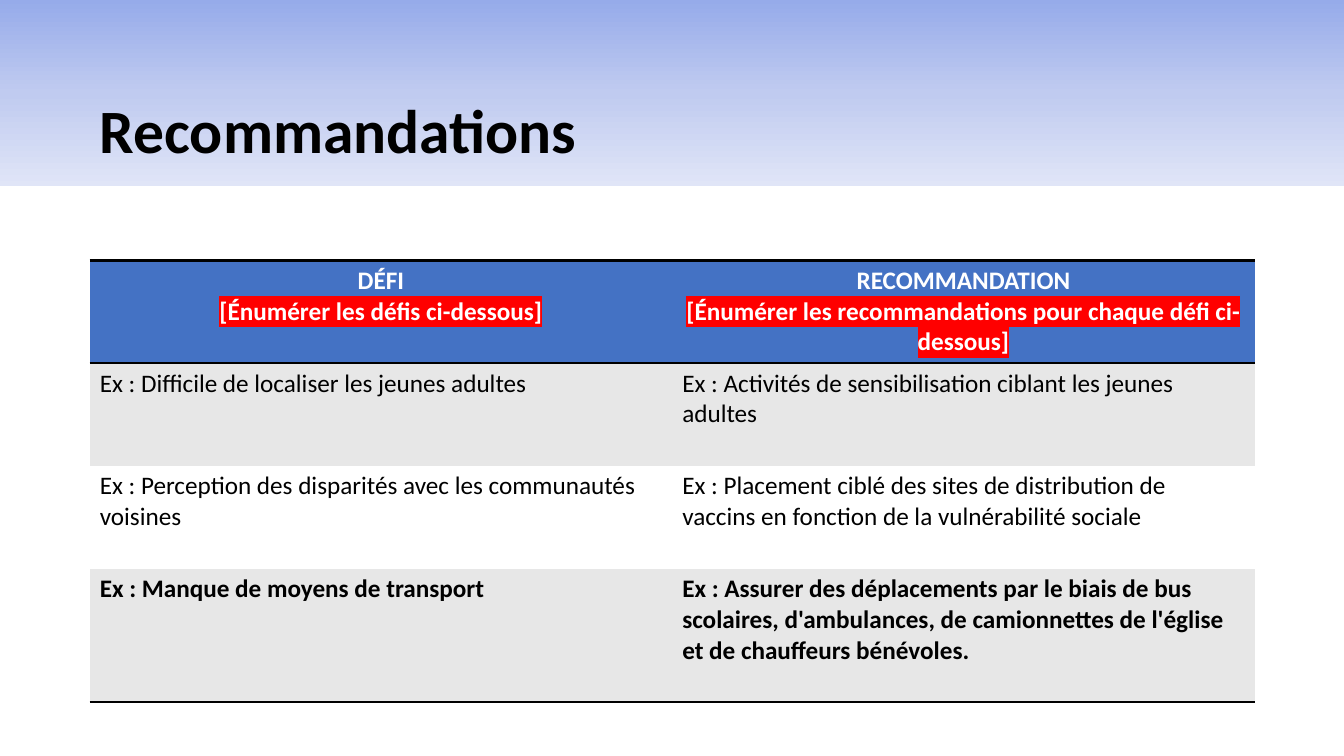
import copy
from dataclasses import dataclass

import lxml.etree
import pptx
import pptx.dml.color
import pptx.enum.dml
import pptx.enum.shapes
import pptx.enum.text
import pptx.oxml.ns
import pptx.util

Cm = pptx.util.Cm
qn = pptx.oxml.ns.qn
ALIGN = pptx.enum.text.PP_ALIGN
ANCHOR = pptx.enum.text.MSO_ANCHOR
NO_GRID_STYLE = "{2D5ABB26-0587-4C30-8999-92F81FD0307C}"


@dataclass(frozen=True)
class Theme:
    font: str = "Calibri"
    title_size: int = 44
    body_size: int = 18
    rule_width: int = 2
    ink: str = "000000"
    paper: str = "FFFFFF"
    header: str = "4472C4"
    stripe: str = "E7E7E7"
    highlight: str = "FF0000"
    band: tuple = ((0, "96ABEA"), (0.5, "C0CBF0"), (1, "E0E5F7"))


def rgb(color):
    return pptx.dml.color.RGBColor.from_string(color)


def write(paragraph, text, *, font, size, color, bold=False, align=ALIGN.LEFT,
          spacing=1.0, highlight=None):
    """Put formatted text in a paragraph."""
    paragraph.alignment = align
    paragraph.line_spacing = spacing
    run = paragraph.add_run()
    run.text = text
    run.font.size = pptx.util.Pt(size)
    run.font.bold = bold
    run.font.color.rgb = rgb(color)
    if highlight:
        mark = lxml.etree.SubElement(run.font._element, qn("a:highlight"))
        lxml.etree.SubElement(mark, qn("a:srgbClr"), val=highlight)
    run.font.name = font


class SlideBuilder:
    def __init__(self, slide, theme):
        self.slide = slide
        self.theme = theme

    def band(self, width, height):
        band = self.slide.shapes.add_shape(
            pptx.enum.shapes.MSO_SHAPE.RECTANGLE, 0, 0, width, height)
        band.shadow.inherit = False
        band.line.fill.background()
        band.fill.gradient()
        band.fill.gradient_angle = 270
        first_stop = band._element.spPr.find(".//" + qn("a:gs"))
        first_stop.addnext(copy.deepcopy(first_stop))
        for stop, (position, color) in zip(band.fill.gradient_stops, self.theme.band):
            stop.position = position
            stop.color.rgb = rgb(color)
        # Send the band behind the title
        self.slide.shapes._spTree.insert(2, band._element)

    def title(self, text, left, top, width, height):
        title = self.slide.shapes.title
        title.left, title.top, title.width, title.height = left, top, width, height
        frame = title.text_frame
        frame.auto_size = pptx.enum.text.MSO_AUTO_SIZE.NONE
        frame.vertical_anchor = ANCHOR.BOTTOM
        write(frame.paragraphs[0], text, font=self.theme.font, bold=True,
              size=self.theme.title_size, color=self.theme.ink, spacing=0.85)

    def table(self, headings, examples, left, top, width, row_heights):
        theme = self.theme
        frame = self.slide.shapes.add_table(
            len(row_heights), len(headings), left, top, width, sum(row_heights))
        table = frame.table
        table.horz_banding = False
        frame._element.find(".//" + qn("a:tableStyleId")).text = NO_GRID_STYLE
        for row, height in zip(table.rows, row_heights):
            row.height = height

        # Header row: a label and a highlighted instruction
        for column, (label, instruction) in enumerate(headings):
            cell = table.cell(0, column)
            self.fill_cell(cell, theme.header, rules=("a:lnT", "a:lnB"))
            style = dict(font=theme.font, size=theme.body_size, color=theme.paper,
                         bold=True, align=ALIGN.CENTER)
            write(cell.text_frame.paragraphs[0], label, **style)
            write(cell.text_frame.add_paragraph(), instruction,
                  highlight=theme.highlight, **style)

        # Striped example rows, the last one bold and ruled off
        for number, example in enumerate(examples, start=1):
            is_last = number == len(examples)
            for column, text in enumerate(example):
                cell = table.cell(number, column)
                self.fill_cell(cell, theme.stripe if number % 2 else theme.paper,
                               rules=("a:lnB",) if is_last else ())
                write(cell.text_frame.paragraphs[0], text, font=theme.font,
                      size=theme.body_size, color=theme.ink, bold=is_last)

    def fill_cell(self, cell, color, rules):
        cell.fill.solid()
        cell.fill.fore_color.rgb = rgb(color)
        properties = cell._tc.get_or_add_tcPr()
        for index, tag in enumerate(rules):
            rule = lxml.etree.Element(
                qn(tag), w=str(pptx.util.Pt(self.theme.rule_width)))
            solid = lxml.etree.SubElement(rule, qn("a:solidFill"))
            lxml.etree.SubElement(solid, qn("a:srgbClr"), val=self.theme.ink)
            properties.insert(index, rule)


HEADINGS = [
    ("DÉFI", "[Énumérer les défis ci-dessous]"),
    ("RECOMMANDATION", "[Énumérer les recommandations pour chaque défi ci-dessous]"),
]
EXAMPLES = [
    ("Ex : Difficile de localiser les jeunes adultes",
     "Ex : Activités de sensibilisation ciblant les jeunes adultes"),
    ("Ex : Perception des disparités avec les communautés voisines",
     "Ex : Placement ciblé des sites de distribution de vaccins en fonction "
     "de la vulnérabilité sociale"),
    ("Ex : Manque de moyens de transport",
     "Ex : Assurer des déplacements par le biais de bus scolaires, d'ambulances, "
     "de camionnettes de l'église et de chauffeurs bénévoles."),
]


def main():
    deck = pptx.Presentation()
    deck.slide_width, deck.slide_height = Cm(33.87), Cm(19.05)
    slide = deck.slides.add_slide(deck.slide_layouts.get_by_name("Title Only"))
    builder = SlideBuilder(slide, Theme())
    margin, content_width = Cm(2.26), Cm(29.36)

    # Heading
    builder.band(deck.slide_width, Cm(4.7))
    builder.title("Recommandations", margin, Cm(1.63), content_width, Cm(2.69))

    # Challenges and recommendations
    builder.table(HEADINGS, EXAMPLES, margin, Cm(6.56), content_width,
                  [Cm(2.59)] * 3 + [Cm(3.36)])
    deck.save("out.pptx")


if __name__ == "__main__":
    main()
